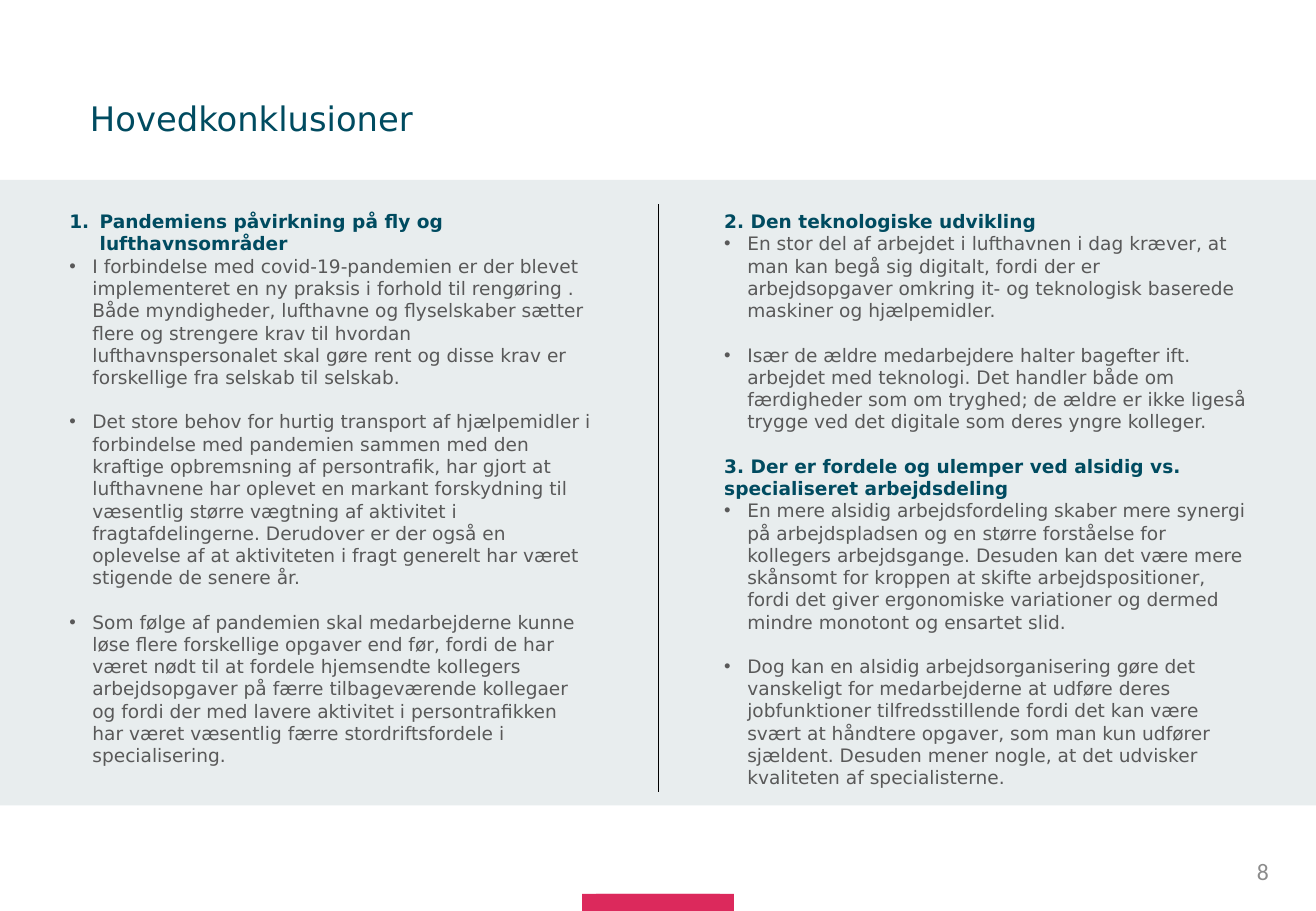
from lxml import etree
from pptx import Presentation
from pptx.dml.color import RGBColor
from pptx.enum.shapes import MSO_CONNECTOR, MSO_SHAPE
from pptx.enum.text import MSO_ANCHOR, MSO_AUTO_SIZE, PP_ALIGN
from pptx.oxml.ns import qn
from pptx.util import Inches, Pt

RECTANGLE = MSO_SHAPE.RECTANGLE
STRAIGHT = MSO_CONNECTOR.STRAIGHT
MIDDLE, TOP = MSO_ANCHOR.MIDDLE, MSO_ANCHOR.TOP
LEFT, RIGHT = PP_ALIGN.LEFT, PP_ALIGN.RIGHT
NO_FIT = MSO_AUTO_SIZE.NONE

TEAL = RGBColor(0x00, 0x4B, 0x60)
MIST = RGBColor(0x8D, 0xA5, 0xAD)
CRIMSON = RGBColor(0xDC, 0x29, 0x5C)
BODY_GREY = RGBColor(0x59, 0x59, 0x59)
NUMBER_GREY = RGBColor(0x8C, 0x8C, 0x8C)
BLACK = RGBColor(0, 0, 0)
TEXT_FONT = "DejaVu Sans"
NUMBER_FONT = "Calibri"

WIDTH, HEIGHT = Inches(10.83), Inches(7.5)
BAND = (0, Inches(1.48), WIDTH, Inches(5.15))
TITLE = (Inches(0.74), Inches(0.79), Inches(9.34), Inches(0.4))
PAGE_NUMBER = (Inches(8.1), Inches(6.97), Inches(2.44), Inches(0.4))
COLUMN_LEFTS = (Inches(0.47), Inches(5.86))
COLUMN_WIDTH, COLUMN_HEIGHT = Inches(4.51), Inches(5)
COLUMN_INSET = Inches(0.2)
TAB_WIDTHS = (Inches(1.25), Inches(1.02))
TAB_HEIGHT = Inches(0.14)
GAP = Pt(13)

NUMBERED, HEADING, BULLET = "numbered", "heading", "bullet"
MARKERS = {
    NUMBERED: ("a:buAutoNum", {"type": "arabicPeriod"}, Inches(0.25)),
    HEADING: ("a:buNone", {}, 0),
    BULLET: ("a:buChar", {"char": "•"}, Inches(0.19)),
}

COLUMNS = [
    [
        (NUMBERED, "Pandemiens påvirkning på fly og lufthavnsområder"),
        (BULLET, "I forbindelse med covid-19-pandemien er der blevet implementeret en ny "
                 "praksis i forhold til rengøring . Både myndigheder, lufthavne og "
                 "flyselskaber sætter flere og strengere krav til hvordan "
                 "lufthavnspersonalet skal gøre rent og disse krav er forskellige fra "
                 "selskab til selskab."),
        (BULLET, "Det store behov for hurtig transport af hjælpemidler i forbindelse med "
                 "pandemien sammen med den kraftige opbremsning af persontrafik, har gjort "
                 "at lufthavnene har oplevet en markant forskydning til væsentlig større "
                 "vægtning af aktivitet i fragtafdelingerne. Derudover er der også en "
                 "oplevelse af at aktiviteten i fragt generelt har været stigende de "
                 "senere år."),
        (BULLET, "Som følge af pandemien skal medarbejderne kunne løse flere forskellige "
                 "opgaver end før, fordi de har været nødt til at fordele hjemsendte "
                 "kollegers arbejdsopgaver på færre tilbageværende kollegaer og fordi der "
                 "med lavere aktivitet i persontrafikken har været væsentlig færre "
                 "stordriftsfordele i specialisering."),
    ],
    [
        (HEADING, "2. Den teknologiske udvikling"),
        (BULLET, "En stor del af arbejdet i lufthavnen i dag kræver, at man kan begå sig "
                 "digitalt, fordi der er arbejdsopgaver omkring it- og teknologisk "
                 "baserede maskiner og hjælpemidler."),
        (BULLET, "Især de ældre medarbejdere halter bagefter ift. arbejdet med teknologi. "
                 "Det handler både om færdigheder som om tryghed; de ældre er ikke ligeså "
                 "trygge ved det digitale som deres yngre kolleger."),
        (HEADING, "3. Der er fordele og ulemper ved alsidig vs. specialiseret "
                  "arbejdsdeling"),
        (BULLET, "En mere alsidig arbejdsfordeling skaber mere synergi på arbejdspladsen "
                 "og en større forståelse for kollegers arbejdsgange. Desuden kan det være "
                 "mere skånsomt for kroppen at skifte arbejdspositioner, fordi det giver "
                 "ergonomiske variationer og dermed mindre monotont og ensartet slid."),
        (BULLET, "Dog kan en alsidig arbejdsorganisering gøre det vanskeligt for "
                 "medarbejderne at udføre deres jobfunktioner tilfredsstillende fordi det "
                 "kan være svært at håndtere opgaver, som man kun udfører sjældent. "
                 "Desuden mener nogle, at det udvisker kvaliteten af specialisterne."),
    ],
]


def place(shape, box):
    shape.left, shape.top, shape.width, shape.height = box


def style(para, font, size, color, bold=False):
    para.font.name = font
    para.font.size = Pt(size)
    para.font.color.rgb = color
    para.font.bold = bold


def add_marker(para, kind):
    tag, attributes, indent = MARKERS[kind]
    properties = para._p.get_or_add_pPr()
    properties.set("marL", str(indent))
    properties.set("indent", str(-indent))
    etree.SubElement(properties, qn(tag), attributes)


def add_block(page, box, color):
    block = page.shapes.add_shape(RECTANGLE, *box)
    block.shadow.inherit = False
    block.fill.solid()
    block.fill.fore_color.rgb = color
    block.line.fill.background()
    return block


def add_band(page, box):
    band = add_block(page, box, MIST)
    color = band._element.spPr.find(f".//{qn('a:srgbClr')}")
    etree.SubElement(color, qn("a:alpha"), val="20000")
    page.shapes._spTree.insert(2, band._element)


def add_bottom_tab(page):
    for width in TAB_WIDTHS:
        add_block(page, ((WIDTH - width) // 2, HEIGHT - TAB_HEIGHT, width, TAB_HEIGHT), CRIMSON)


def fill_title(title, box):
    place(title, box)
    frame = title.text_frame
    frame.auto_size = NO_FIT
    frame.vertical_anchor = MIDDLE
    frame.margin_left = frame.margin_right = frame.margin_top = frame.margin_bottom = 0
    frame.text = "Hovedkonklusioner"
    para = frame.paragraphs[0]
    para.alignment = LEFT
    para.line_spacing = 0.9
    style(para, TEXT_FONT, 20, TEAL)


def fill_column(body, box, items):
    place(body, box)
    frame = body.text_frame
    frame.auto_size = NO_FIT
    frame.vertical_anchor = TOP
    frame.text = "\n".join(text for kind, text in items)
    previous = None
    for para, (kind, text) in zip(frame.paragraphs, items):
        add_marker(para, kind)
        para.space_before = GAP if previous == BULLET else 0
        is_bullet = kind == BULLET
        style(para, TEXT_FONT, 11, BODY_GREY if is_bullet else TEAL, not is_bullet)
        previous = kind


def add_divider(page, band):
    left, top, width, height = band
    middle = left + width // 2
    line = page.shapes.add_connector(
        STRAIGHT, middle, top + COLUMN_INSET, middle, top + height - Inches(0.11))
    line.line.color.rgb = BLACK
    line.line.width = Pt(0.5)
    etree.SubElement(line._element.spPr, qn("a:effectLst"))


def add_page_number(page, box):
    frame = page.shapes.add_textbox(*box).text_frame
    frame.word_wrap = True
    frame.vertical_anchor = MIDDLE
    frame.text = "8"
    frame.paragraphs[0].alignment = RIGHT
    style(frame.paragraphs[0], NUMBER_FONT, 14, NUMBER_GREY)


def build_conclusions(deck):
    page = deck.slides.add_slide(deck.slide_layouts.get_by_name("Two Content"))
    title, *bodies = page.placeholders
    fill_title(title, TITLE)
    for body, left, items in zip(bodies, COLUMN_LEFTS, COLUMNS):
        fill_column(body, (left, BAND[1] + COLUMN_INSET, COLUMN_WIDTH, COLUMN_HEIGHT), items)
    add_band(page, BAND)
    add_divider(page, BAND)
    add_page_number(page, PAGE_NUMBER)
    add_bottom_tab(page)


def main():
    deck = Presentation()
    deck.slide_width, deck.slide_height = WIDTH, HEIGHT
    build_conclusions(deck)
    deck.save("out.pptx")


if __name__ == "__main__":
    main()
